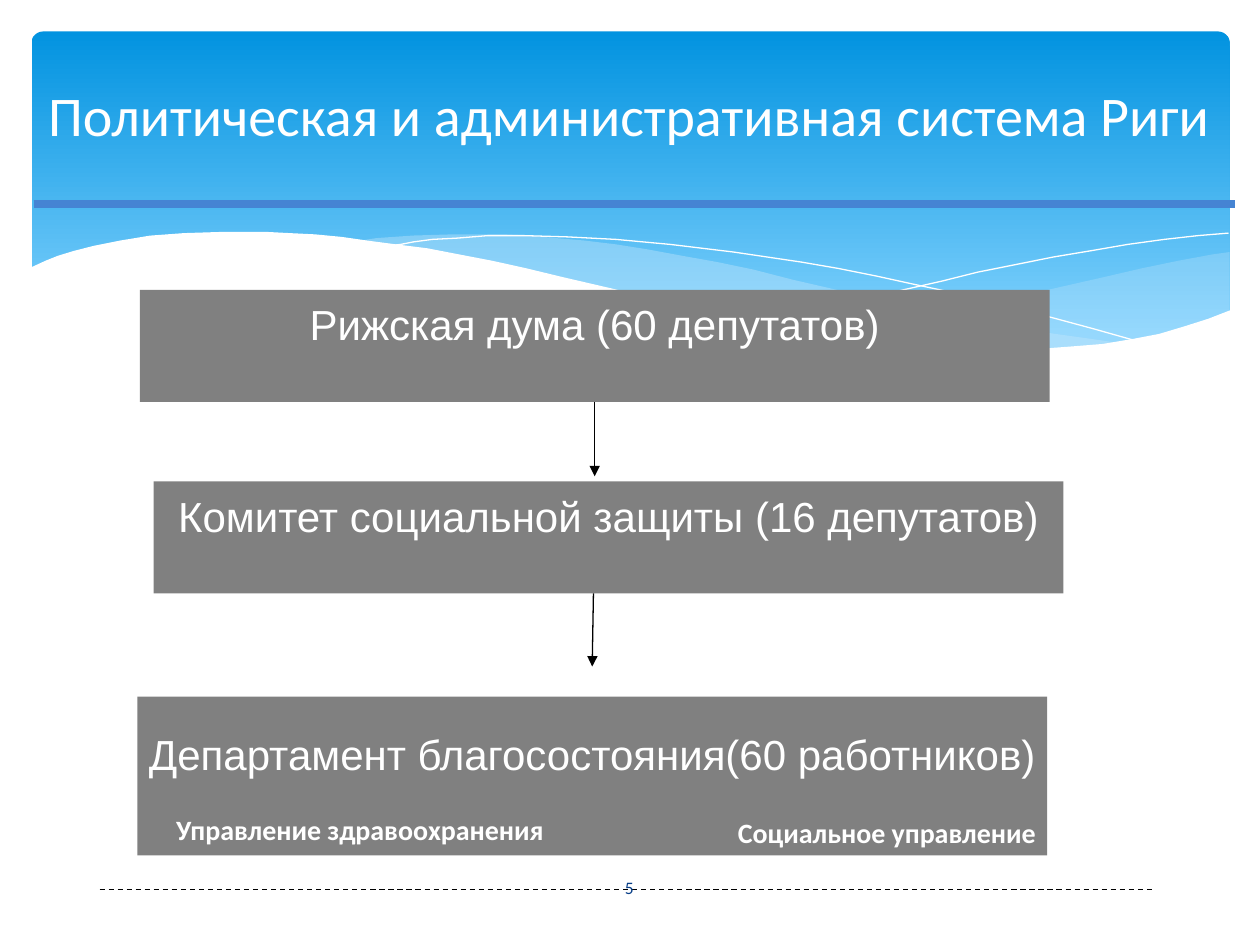
from lxml import etree
from pptx import Presentation
from pptx import util as u
from pptx.dml.color import RGBColor
from pptx.enum import dml, shapes, text
from pptx.oxml.ns import qn

RIGHT_SWELL = [
    (9.76, 2), (9.62, 2.02), (9.35, 2.07), (9.06, 2.13), (8.76, 2.2), (8.32, 2.3),
    (7.79, 2.43), (7.29, 2.53), (6.83, 2.62), (6.61, 2.65), (6.91, 2.69), (7.18, 2.73),
    (7.45, 2.75), (7.69, 2.77), (8.03, 2.78), (8.35, 2.77), (8.63, 2.75), (8.89, 2.72),
    (9.13, 2.67), (9.35, 2.62), (9.49, 2.57), (9.63, 2.52), (9.76, 2.47)]
MIDDLE_SWELL = [
    (8.93, 2.73), (8.66, 2.69), (8.37, 2.65), (8.07, 2.6), (7.75, 2.54), (7.41, 2.48),
    (7.06, 2.4), (6.68, 2.31), (6.29, 2.22), (5.98, 2.14), (5.69, 2.08), (5.41, 2.03),
    (5.14, 1.98), (4.89, 1.94), (4.64, 1.91), (4.41, 1.89), (4.2, 1.87), (3.99, 1.86),
    (3.61, 1.86), (3.28, 1.87), (2.99, 1.89), (2.86, 1.91), (3.23, 1.96), (3.62, 2.03),
    (4.04, 2.11), (4.49, 2.22), (4.91, 2.32), (5.3, 2.4), (5.66, 2.48), (6.01, 2.55),
    (6.34, 2.61), (6.65, 2.66), (6.95, 2.7), (7.22, 2.74), (7.48, 2.76), (7.73, 2.78),
    (8.07, 2.79), (8.38, 2.78), (8.67, 2.76)]
FALLING_LINE = [
    (3.09, 1.95), (3.18, 1.94), (3.28, 1.92), (3.43, 1.9), (3.63, 1.89), (3.87, 1.87),
    (4.16, 1.87), (4.5, 1.88), (4.89, 1.9), (5.32, 1.94), (5.82, 2), (6.36, 2.08),
    (6.65, 2.13), (6.95, 2.19), (7.27, 2.26), (7.6, 2.33), (7.95, 2.42), (8.31, 2.51),
    (8.68, 2.61), (9.07, 2.72)]
RISING_LINE = [
    (6.13, 2.57), (6.52, 2.46), (6.95, 2.35), (7.48, 2.23), (7.76, 2.16), (8.06, 2.1),
    (8.36, 2.04), (8.66, 1.99), (8.95, 1.94), (9.24, 1.9), (9.51, 1.87), (9.75, 1.85)]
WHITE_WAVE = [
    (9.77, 2.46), (9.59, 2.53), (9.4, 2.59), (9.2, 2.65), (8.99, 2.69), (8.75, 2.73),
    (8.5, 2.75), (8.23, 2.77), (7.93, 2.76), (7.61, 2.75), (7.26, 2.72), (6.88, 2.68),
    (6.47, 2.62), (6.03, 2.54), (5.55, 2.45), (5.03, 2.33), (4.47, 2.2), (4.18, 2.13),
    (3.91, 2.07), (3.65, 2.02), (3.39, 1.97), (3.15, 1.94), (2.92, 1.91), (2.71, 1.88),
    (2.5, 1.86), (2.3, 1.85), (2.11, 1.84), (1.77, 1.84), (1.46, 1.85), (1.19, 1.87),
    (0.95, 1.91), (0.75, 1.95), (0.59, 1.99), (0.46, 2.03), (0.36, 2.07), (0.23, 2.13),
    (0.23, 3.29), (9.77, 3.29)]


def rgb(value):
    """Turn a hex string into a colour."""
    return RGBColor.from_string(value)


def write(sp, words, size, color="FFFFFF", font="Calibri", bold=False,
          align=text.PP_ALIGN.CENTER, anchor=text.MSO_ANCHOR.MIDDLE, wrap=True):
    """Write one formatted paragraph into a shape."""
    tf = sp.text_frame
    tf.word_wrap = wrap
    tf.vertical_anchor = anchor
    p = tf.paragraphs[0]
    p.alignment = align
    r = p.add_run()
    r.text = words
    r.font.size = u.Pt(size)
    r.font.name = font
    r.font.bold = bold
    r.font.color.rgb = rgb(color)


def add_text(s, box, words, size, **fmt):
    """Add a text box in the given box of inches."""
    write(s.shapes.add_textbox(*map(u.Inches, box)), words, size, **fmt)


def add_box(s, kind, box, fill=None):
    """Add a preset shape without outline or shadow."""
    sp = s.shapes.add_shape(kind, *map(u.Inches, box))
    sp.shadow.inherit = False
    sp.line.fill.background()
    if fill:
        sp.fill.solid()
        sp.fill.fore_color.rgb = rgb(fill)
    return sp


def add_line(s, start, end, color="000000", width=0.75, arrow=False, dash=None):
    """Add a straight connector, with an arrowhead or dashes if asked."""
    cx = s.shapes.add_connector(shapes.MSO_CONNECTOR.STRAIGHT, *map(u.Inches, start + end))
    cx.line.color.rgb = rgb(color)
    cx.line.width = u.Pt(width)
    if dash:
        cx.line.dash_style = dash
    if arrow:
        etree.SubElement(cx.line._get_or_add_ln(), qn("a:tailEnd"), type="triangle")
    etree.SubElement(cx._element.spPr, qn("a:effectLst"))
    return cx


def add_wave(s, left, top, points, fill=None, opacity=100):
    """Add a filled wave, or a thin white curve when no fill is given."""
    pts = [(u.Inches(left + x), u.Inches(top + y)) for x, y in points]
    builder = s.shapes.build_freeform(*pts[0])
    builder.add_line_segments(pts[1:], close=bool(fill))
    sp = builder.convert_to_shape()
    sp.shadow.inherit = False
    if fill:
        sp.fill.solid()
        sp.fill.fore_color.rgb = rgb(fill)
        sp.line.fill.background()
        clr = sp._element.spPr.find(qn("a:solidFill"))[0]
        etree.SubElement(clr, qn("a:alpha"), val=str(opacity * 1000))
    else:
        sp.fill.background()
        sp.line.color.rgb = rgb("FFFFFF")
        sp.line.width = u.Pt(0)


def add_header(s, left, top, width):
    """Draw the gradient banner with its waves, rule and title."""
    banner = add_box(s, shapes.MSO_SHAPE.ROUNDED_RECTANGLE,
                     (left + 0.25, top + 0.25, width - 0.49, 2.7))
    banner.adjustments[0] = 0.034
    banner.fill.gradient()
    banner.fill.gradient_angle = 270
    stops = banner.fill.gradient_stops
    for stop, position, color in zip(stops, (0, 0.9), ("0293E0", "83D3FE")):
        stop.position = position
        stop.color.rgb = rgb(color)
    add_wave(s, left, top, RIGHT_SWELL, "C6E7FC", 29)
    add_wave(s, left, top, MIDDLE_SWELL, "C6E7FC", 40)
    add_wave(s, left, top, FALLING_LINE)
    add_wave(s, left, top, RISING_LINE)
    add_wave(s, left, top, WHITE_WAVE, "FFFFFF")
    add_line(s, (left + 0.27, top + 1.62), (left + width - 0.2, top + 1.62), "4584D3", 4.5)
    add_text(s, (left + 0.27, top + 0.28, width - 0.55, 1.25),
             "Политическая и административная система Риги", 32)


def add_hierarchy(s, left, top, width):
    """Draw the three levels of authority and the arrows between them."""
    levels = [(0.02, 0, 0.89, "Рижская дума (60 депутатов)"),
              (0.13, 1.52, 0.89, "Комитет социальной защиты (16 депутатов)"),
              (0, 3.23, 1.26, "Департамент благосостояния(60 работников)")]
    boxes = []
    for dx, dy, height, words in levels:
        sp = add_box(s, shapes.MSO_SHAPE.RECTANGLE,
                     (left + dx, top + dy, width, height), "808080")
        sp.text_frame.margin_bottom = u.Inches(0.4)
        write(sp, words, 24, font="Arial", wrap=False)
        boxes.append(sp)
    middle = left + width / 2
    first = add_line(s, (middle + 0.02, top + 0.89), (middle + 0.02, top + 1.48), arrow=True)
    first.begin_connect(boxes[0], 2)
    add_line(s, (middle + 0.01, top + 2.41), (middle, top + 2.99), arrow=True)
    add_text(s, (left + 4.5, top + 4.12, 2.73, 0.37), "Социальное управление", 16,
             bold=True, align=text.PP_ALIGN.RIGHT, anchor=text.MSO_ANCHOR.TOP)
    add_text(s, (left + 0.21, top + 4.1, 3.2, 0.37), "Управление здравоохранения", 16,
             bold=True, align=text.PP_ALIGN.LEFT, anchor=text.MSO_ANCHOR.TOP, wrap=False)


def add_footer(s, left, top, width):
    """Draw the dashed rule and the slide number."""
    add_line(s, (left, top + 0.22), (left + width, top + 0.22), dash=dml.MSO_LINE.DASH)
    add_text(s, (left + 3.57, top, 1.27, 0.4), "5", 10, color="073E87")


def main():
    """Build and save the slide."""
    prs = Presentation()
    prs.slide_width, prs.slide_height = u.Inches(10), u.Inches(7.5)
    s = prs.slides.add_slide(prs.slide_layouts[6])
    add_header(s, 0, 0, 10)
    add_hierarchy(s, 1.09, 2.3, 7.22)
    add_footer(s, 0.79, 6.84, 8.35)
    prs.save("out.pptx")


if __name__ == "__main__":
    main()
